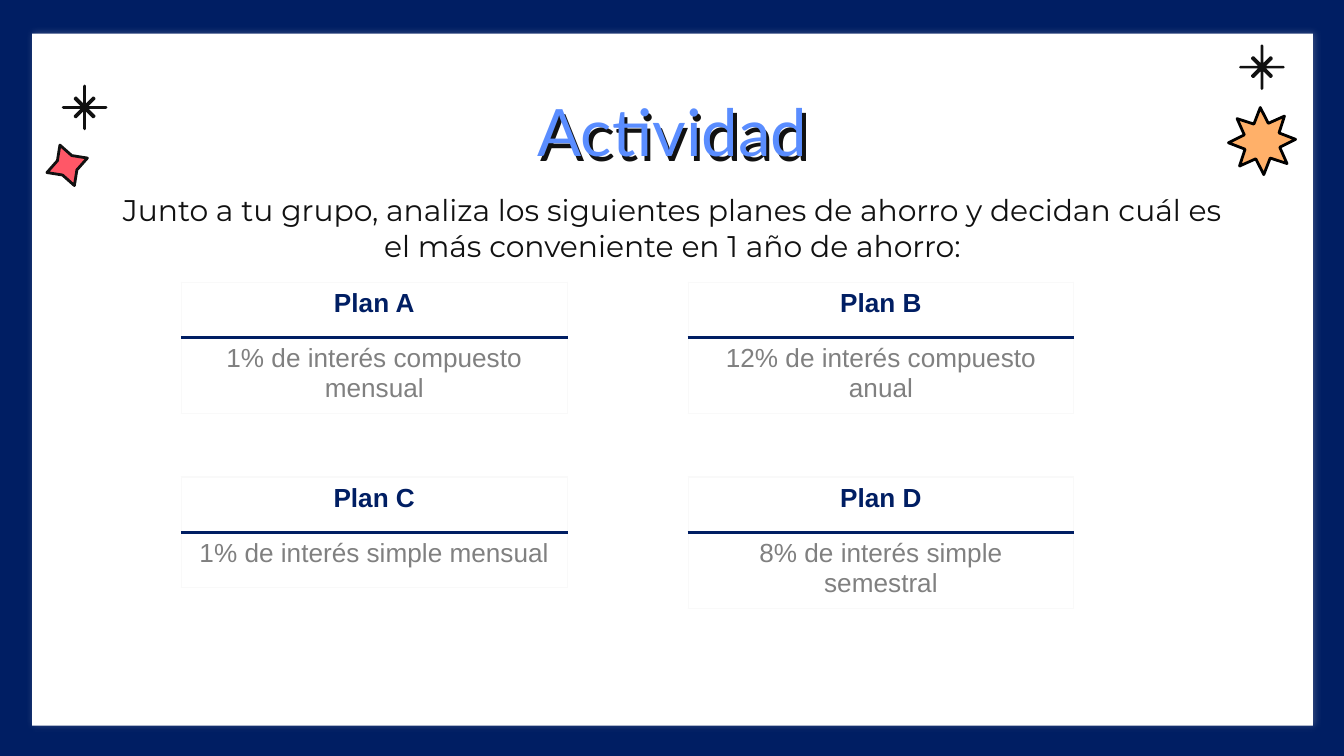
import math

import pptx
import pptx.dml.color
import pptx.enum.shapes
import pptx.enum.text
import pptx.oxml.ns
import pptx.util
from lxml import etree

Inches = pptx.util.Inches
qn = pptx.oxml.ns.qn
NAVY, WHITE, INK, PALE = "001E63", "FFFFFF", "111111", "F9F9F9"


def paint(target, color):
    """Give a fill or a font a solid colour."""
    if hasattr(target, "solid"):
        target.solid()
        target = target.fore_color
    else:
        target = target.color
    target.rgb = pptx.dml.color.RGBColor.from_string(color)


def add_outline(center, points, color, edge=None, rotation=0):
    """Draw a closed outline from points in inches around a center."""
    corners = [(Inches(center[0] + x), Inches(center[1] + y)) for x, y in points]
    builder = slide.shapes.build_freeform(*corners[0], scale=1.0)
    builder.add_line_segments(corners[1:], close=True)
    outline = builder.convert_to_shape()
    outline.shadow.inherit = False
    outline.rotation = rotation
    paint(outline.fill, color)
    if edge:
        paint(outline.line.fill, edge)
        outline.line.width = pptx.util.Pt(1.5)
    else:
        outline.line.fill.background()


# Widescreen deck, 16 to 9
deck = pptx.Presentation()
deck.slide_width = Inches(10)
deck.slide_height = Inches(10 * 9 / 16)
slide = deck.slides.add_slide(deck.slide_layouts[6])
paint(slide.background.fill, NAVY)

# White page inside the navy frame
page = slide.shapes.add_shape(
    pptx.enum.shapes.MSO_SHAPE.RECTANGLE,
    Inches(0.24), Inches(0.25), Inches(9.53), Inches(5.15))
paint(page.fill, WHITE)
page.line.fill.background()

# Black sparkles: one quarter, turned four times
quarter = [(-0.01, -0.03), (-0.01, -0.16), (0, -0.17), (0.01, -0.16), (0.01, -0.03),
           (0.06, -0.08), (0.07, -0.08), (0.08, -0.07), (0.08, -0.06)]
sparkle = []
for turn in range(4):
    sparkle += quarter
    quarter = [(-y, x) for x, y in quarter]
for center in [(0.63, 0.8), (9.39, 0.5)]:
    add_outline(center, sparkle, INK)

# Orange and red stars
for center, tips, outer, inner, start, rotation, color, edge in [
    ((9.39, 1.05), 8, 0.25, 0.14, 13.8, 28.2, "FFB069", "000000"),
    ((0.5, 1.23), 4, 0.16, 0.08, 0, 340.3, "FF5767", INK),
]:
    star = []
    for step in range(2 * tips):
        angle = math.radians(start + step * 180 / tips)
        radius = inner if step % 2 else outer
        star.append((radius * math.cos(angle), radius * math.sin(angle)))
    add_outline(center, star, color, edge, rotation)

# Title and instructions
boxes = []
for top, height, text, font, size, color, spacing in [
    (0.49, 0.63, "Actividad", "Lato", 35, "5A8DFF", 1.15),
    (1.33, 0.34, "Junto a tu grupo, analiza los siguientes planes de ahorro y decidan "
     "cuál es el más conveniente en 1 año de ahorro:", "Montserrat", 16, INK, 1.0),
]:
    box = slide.shapes.add_textbox(Inches(0.79), Inches(top), Inches(8.43), Inches(height))
    frame = box.text_frame
    frame.word_wrap = True
    frame.margin_left = frame.margin_right = Inches(0.1)
    frame.margin_top = frame.margin_bottom = Inches(0.1)
    frame.text = text
    para = frame.paragraphs[0]
    para.alignment = pptx.enum.text.PP_ALIGN.CENTER
    para.line_spacing = spacing
    span = para.runs[0]
    span.font.name, span.font.size = font, pptx.util.Pt(size)
    paint(span.font, color)
    boxes.append(box)

# Shadows of the page and the title: colour, opacity %, blur, distance, degrees
for shape, color, opacity, blur, distance, degrees in [
    (page, "D9D9D9", 25, 3.4, 0.8, 0),
    (boxes[0], INK, 100, 0, 3.5, 60),
]:
    shape.shadow.inherit = False
    effects = shape._element.spPr.find(qn("a:effectLst"))
    shadow = etree.SubElement(
        effects, qn("a:outerShdw"), blurRad=str(pptx.util.Pt(blur)),
        dist=str(pptx.util.Pt(distance)), dir=str(degrees * 60000),
        algn="bl", rotWithShape="0")
    tint = etree.SubElement(shadow, qn("a:srgbClr"), val=color)
    etree.SubElement(tint, qn("a:alpha"), val=str(opacity * 1000))

# Savings plans in a two by two grid, with the height of each table
plans = [
    ("Plan A", "1% de interés compuesto mensual", 0.97),
    ("Plan B", "12% de interés compuesto anual", 0.97),
    ("Plan C", "1% de interés simple mensual", 0.81),
    ("Plan D", "8% de interés simple semestral", 0.97),
]
for index, (heading, detail, height) in enumerate(plans):
    line, column = divmod(index, 2)
    holder = slide.shapes.add_table(
        2, 1, Inches(1.35 + 3.77 * column), Inches(2.1 + 1.45 * line),
        Inches(2.87), Inches(height))
    table = holder.table
    table.horz_banding = False
    for row, text in enumerate([heading, detail]):
        table.rows[row].height = Inches(0.41)
        cell = table.cell(row, 0)
        cell.text = text
        para = cell.text_frame.paragraphs[0]
        para.alignment = pptx.enum.text.PP_ALIGN.CENTER
        font = para.runs[0].font
        font.name, font.size, font.bold = "Arial", pptx.util.Pt(14), row == 0
        paint(font, "808080" if row else NAVY)
        paint(cell.fill, WHITE)
        properties = cell._tc.get_or_add_tcPr()
        if row:
            tint = properties.find(qn("a:solidFill")).find(qn("a:srgbClr"))
            etree.SubElement(tint, qn("a:alpha"), val="40000")

        # Pale borders, with a navy rule between heading and detail
        for place, side in enumerate(["L", "R", "T", "B"]):
            is_rule = (row, side) in [(0, "B"), (1, "T")]
            border = etree.Element(
                qn("a:ln" + side), w=str(pptx.util.Pt(2 if is_rule else 0.75)))
            fill = etree.SubElement(border, qn("a:solidFill"))
            etree.SubElement(fill, qn("a:srgbClr"), val=NAVY if is_rule else PALE)
            properties.insert(place, border)
    holder.height = Inches(height)

deck.save("out.pptx")
